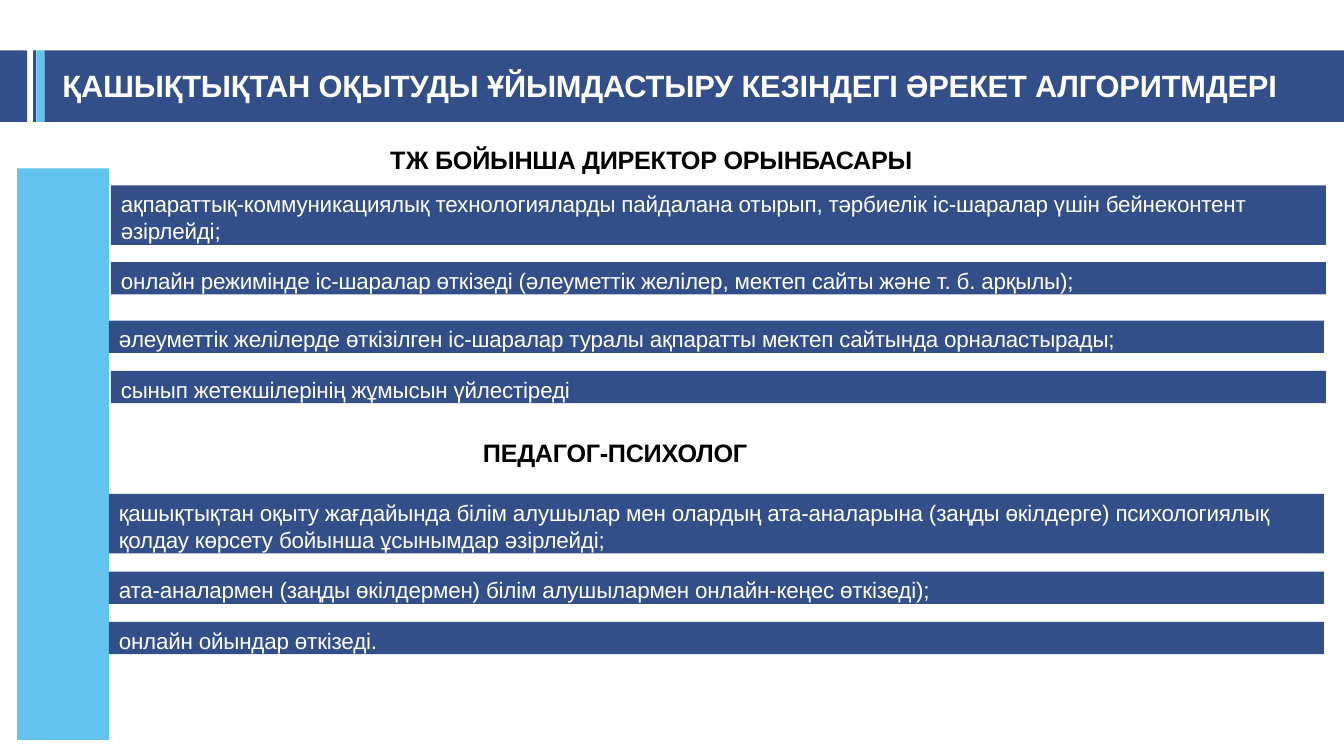
from pptx import Presentation
from pptx.dml.color import RGBColor
from pptx.enum.shapes import MSO_SHAPE as Shape
from pptx.enum.text import MSO_ANCHOR as Anchor, MSO_AUTO_SIZE as AutoSize, PP_ALIGN as Align
from pptx.util import Inches, Pt

NAVY, SKY, WHITE, BLACK = "334F89", "61C3EE", "FFFFFF", "000000"
WIDTH, HEIGHT = 13.33, 7.5
BAND_TOP, BAND_HEIGHT = 0.5, 0.71
BAR_WIDTH, LINE_BAR, TWO_LINE_BAR = 12.05, 0.32, 0.59
INNER, OUTER = 1.08, 1.1  # the two left edges the bars use

presentation = Presentation()
presentation.slide_width = Inches(WIDTH)
presentation.slide_height = Inches(HEIGHT)
slide = presentation.slides.add_slide(presentation.slide_layouts[6])


def add_block(left, top, width, height, color):
    shape = slide.shapes.add_shape(
        Shape.RECTANGLE, Inches(left), Inches(top), Inches(width), Inches(height))
    shape.shadow.inherit = False
    shape.fill.solid()
    shape.fill.fore_color.rgb = RGBColor.from_string(color)
    shape.line.fill.background()
    return shape


def write(shape, text, size, color, bold, margins, space_before, tracking):
    """Fill a shape with one left-aligned line; tracking is in hundredths of a point."""
    frame = shape.text_frame
    frame.text = text
    frame.word_wrap = True
    frame.auto_size = AutoSize.SHAPE_TO_FIT_TEXT
    frame.vertical_anchor = Anchor.TOP
    frame.margin_left, frame.margin_top = (Inches(margin) for margin in margins)
    frame.margin_right = frame.margin_bottom = 0
    paragraph = frame.paragraphs[0]
    paragraph.alignment = Align.LEFT
    paragraph.space_before = Pt(space_before)
    run = paragraph.runs[0]
    run.font.name = "Arial"
    run.font.size = Pt(size)
    run.font.bold = bold
    run.font.color.rgb = RGBColor.from_string(color)
    run._r.get_or_add_rPr().set("spc", str(tracking))


# Title band
for left, right, color in [
    (0.44, WIDTH, NAVY),
    (0.33, 0.36, NAVY),
    (0, 0.27, NAVY),
    (0.36, 0.44, SKY),
]:
    add_block(left, BAND_TOP, right - left, BAND_HEIGHT, color)

# Side column
add_block(0.17, 1.67, 0.91, 5.67, SKY)

# Title and section headings
for left, top, width, height, size, color, tracking, text in [
    (0.61, 0.65, 12.54, 0.38, 22, WHITE, -10,
     "ҚАШЫҚТЫҚТАН ОҚЫТУДЫ ҰЙЫМДАСТЫРУ КЕЗІНДЕГІ ӘРЕКЕТ АЛГОРИТМДЕРІ"),
    (3.86, 1.42, 6.89, 0.32, 18, BLACK, -20, "ТЖ БОЙЫНША ДИРЕКТОР ОРЫНБАСАРЫ"),
    (4.78, 4.33, 6.89, 0.32, 18, BLACK, -20, "ПЕДАГОГ-ПСИХОЛОГ"),
]:
    heading = slide.shapes.add_textbox(
        Inches(left), Inches(top), Inches(width), Inches(height))
    write(heading, text, size, color, True, (0.01, 0.01), 1, tracking)

# Task bars
for left, top, height, text in [
    (OUTER, 1.84, TWO_LINE_BAR,
     "ақпараттық-коммуникациялық технологияларды пайдалана отырып, "
     "тәрбиелік іс-шаралар үшін бейнеконтент әзірлейді;"),
    (OUTER, 2.6, LINE_BAR,
     "онлайн режимінде іс-шаралар өткізеді "
     "(әлеуметтік желілер, мектеп сайты және т. б. арқылы);"),
    (INNER, 3.18, LINE_BAR,
     "әлеуметтік желілерде өткізілген іс-шаралар туралы "
     "ақпаратты мектеп сайтында орналастырады;"),
    (OUTER, 3.68, LINE_BAR, "сынып жетекшілерінің жұмысын үйлестіреді"),
    (INNER, 4.9, TWO_LINE_BAR,
     "қашықтықтан оқыту жағдайында білім алушылар мен олардың ата-аналарына "
     "(заңды өкілдерге) психологиялық қолдау көрсету бойынша ұсынымдар әзірлейді;"),
    (INNER, 5.67, LINE_BAR,
     "ата-аналармен (заңды өкілдермен) білім алушылармен онлайн-кеңес өткізеді);"),
    (INNER, 6.17, LINE_BAR, "онлайн ойындар өткізеді."),
]:
    bar = add_block(left, top, BAR_WIDTH, height, NAVY)
    write(bar, text, 16, WHITE, False, (0.1, 0.05), 3.4, -10)

presentation.save("out.pptx")
